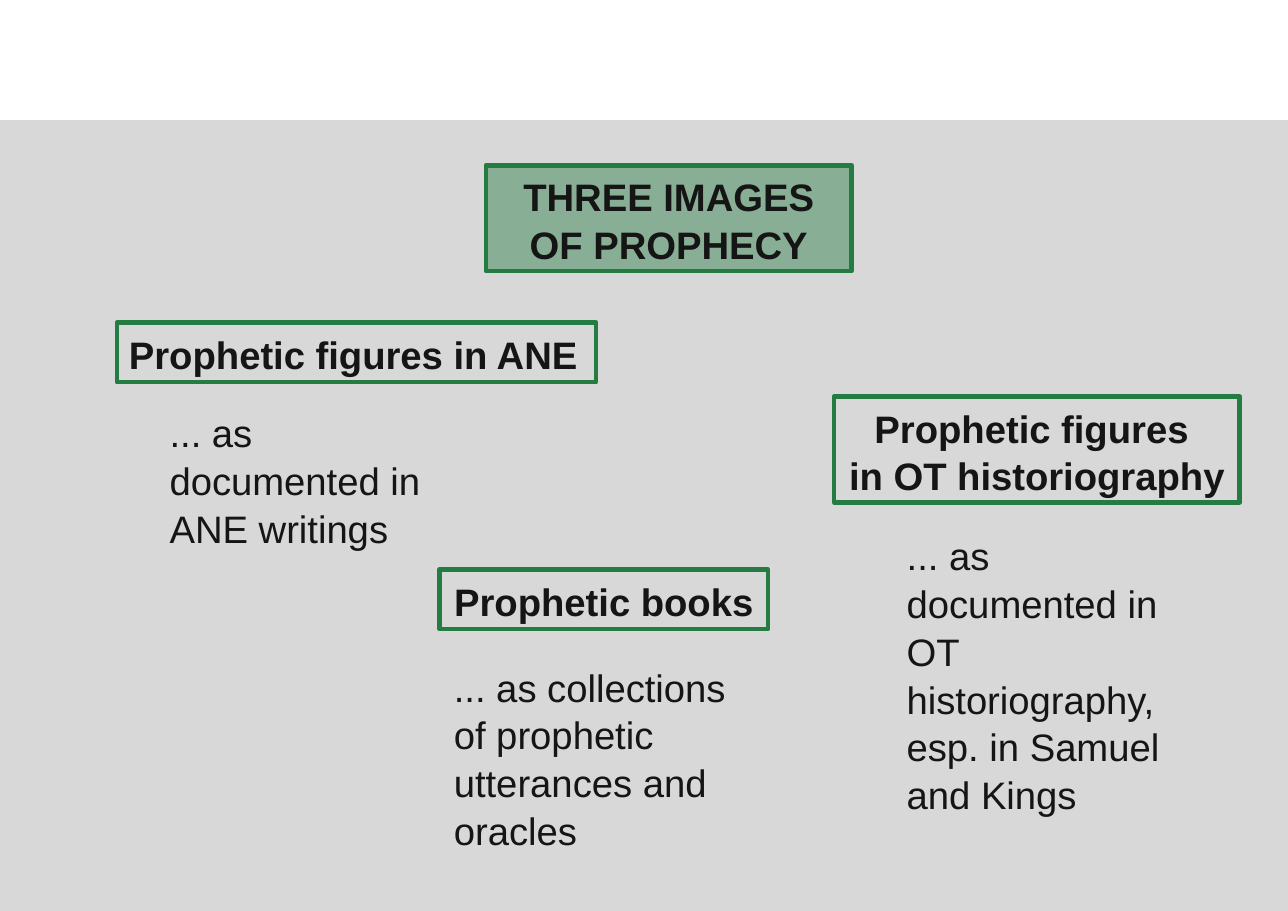
from lxml import etree
from pptx import Presentation
from pptx.dml.color import RGBColor
from pptx.enum.shapes import MSO_SHAPE
from pptx.enum.text import MSO_ANCHOR, MSO_AUTO_SIZE, PP_ALIGN
from pptx.oxml.ns import qn
from pptx.util import Inches, Pt

LEFT, CENTER = PP_ALIGN.LEFT, PP_ALIGN.CENTER
TOP = MSO_ANCHOR.TOP
FIXED = MSO_AUTO_SIZE.NONE
RECTANGLE = MSO_SHAPE.RECTANGLE

GREEN = RGBColor(0x24, 0x7C, 0x43)
GREY = RGBColor(0xD8, 0xD8, 0xD8)
INK = RGBColor(0x15, 0x15, 0x15)

SLIDE_WIDTH, SLIDE_HEIGHT = Inches(11.69), Inches(8.27)
INSET_X, INSET_Y = Inches(0.11), Inches(0.06)
LINE_HEIGHT = Inches(0.42)
BAND_TOP = 13.18
BODY_WIDTH = 25.24

# Each place is (left %, top %, width %, lines of text).
TITLE = ("THREE IMAGES OF PROPHECY", (37.72, 18.14, 28.4, 2))
HEADINGS = [
    ("Prophetic figures in ANE", (9.07, 35.43, 37.21, 1), LEFT),
    ("Prophetic figures \nin OT historiography", (64.76, 43.53, 31.48, 2), CENTER),
    ("Prophetic books", (34.13, 62.52, 25.49, 1), CENTER),
]
BODIES = [
    ("... as documented in ANE writings", (12.23, 44.01, BODY_WIDTH, 3)),
    ("... as documented in OT historiography, esp. in Samuel and Kings",
     (69.46, 57.56, BODY_WIDTH, 6)),
    ("... as collections of prophetic utterances and oracles",
     (34.3, 71.95, BODY_WIDTH, 4)),
]


def across(share):
    return round(SLIDE_WIDTH * share / 100)


def down(share):
    return round(SLIDE_HEIGHT * share / 100)


def bounds(place):
    left, top, width, lines = place
    return across(left), down(top), across(width), 2 * INSET_Y + lines * LINE_HEIGHT


def write(box, text, align, bold):
    frame = box.text_frame
    frame.word_wrap = True
    frame.auto_size = FIXED
    frame.vertical_anchor = TOP
    frame.margin_left = frame.margin_right = INSET_X
    frame.margin_top = frame.margin_bottom = INSET_Y
    paragraph = frame.paragraphs[0]
    paragraph.text = text
    paragraph.alignment = align
    paragraph.line_spacing = 1.04
    paragraph.space_before = Pt(0)
    for run in paragraph.runs:
        run.font.name = "Arial"
        run.font.size = Pt(25)
        run.font.bold = bold
        run.font.color.rgb = INK


def outline(box):
    box.line.color.rgb = GREEN
    box.line.width = Pt(3)


def main():
    deck = Presentation()
    deck.slide_width, deck.slide_height = SLIDE_WIDTH, SLIDE_HEIGHT
    slide = deck.slides.add_slide(deck.slide_layouts[5])
    shapes = slide.shapes

    band = shapes.add_shape(RECTANGLE, 0, down(BAND_TOP), SLIDE_WIDTH,
                            SLIDE_HEIGHT - down(BAND_TOP))
    band.shadow.inherit = False
    band.fill.solid()
    band.fill.fore_color.rgb = GREY
    band.line.fill.background()

    title_text, title_place = TITLE
    title = shapes.title
    title.left, title.top, title.width, title.height = bounds(title_place)
    title.fill.solid()
    title.fill.fore_color.rgb = GREEN
    tint = title.element.spPr.find(qn("a:solidFill")).find(qn("a:srgbClr"))
    etree.SubElement(tint, qn("a:alpha")).set("val", "44000")
    outline(title)
    write(title, title_text, CENTER, True)
    title.element.addprevious(band.element)

    for text, place, align in HEADINGS:
        heading = shapes.add_shape(RECTANGLE, *bounds(place))
        heading.shadow.inherit = False
        heading.fill.background()
        outline(heading)
        write(heading, text, align, True)

    for text, place in BODIES:
        write(shapes.add_textbox(*bounds(place)), text, LEFT, False)

    deck.save("out.pptx")


if __name__ == "__main__":
    main()
